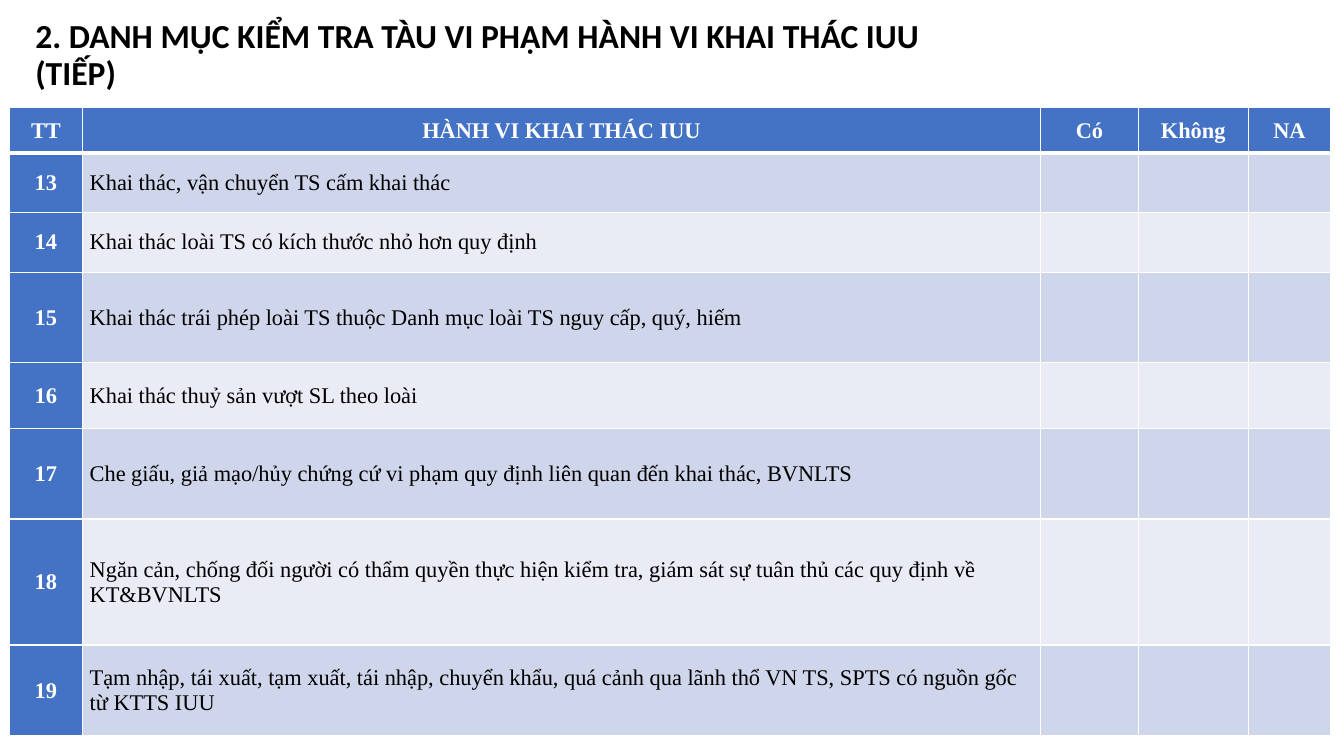
from pptx import Presentation
from pptx import util as u
from pptx.dml.color import RGBColor
from pptx.enum import text
from pptx.oxml import parse_xml
from pptx.oxml.ns import nsdecls

HUES = {"head": "4472C4", "odd": "CFD5EA", "even": "E9EBF5", "ink": "000000", "white": "FFFFFF"}
HEADS = ["TT", "HÀNH VI KHAI THÁC IUU", "Có", "Không", "NA"]
ACTS = [
    "Khai thác, vận chuyển TS cấm khai thác",
    "Khai thác loài TS có kích thước nhỏ hơn quy định",
    "Khai thác trái phép loài TS thuộc Danh mục loài TS nguy cấp, quý, hiếm",
    "Khai thác thuỷ sản vượt SL theo loài",
    "Che giấu, giả mạo/hủy chứng cứ vi phạm quy định liên quan đến khai thác, BVNLTS",
    "Ngăn cản, chống đối người có thẩm quyền thực hiện kiểm tra, giám sát sự tuân thủ các quy định về KT&BVNLTS",
    "Tạm nhập, tái xuất, tạm xuất, tái nhập, chuyển khẩu, quá cảnh qua lãnh thổ VN TS, SPTS có nguồn gốc từ KTTS IUU",
]
WIDTHS = [0.73, 9.5, 0.97, 1.09, 0.82]
HEIGHTS = [0.45, 0.59, 0.59, 0.9, 0.65, 0.9, 1.25, 0.9]
FIRST = 13


def style(para, face, size, hue, bold):
    for run in para.runs:
        run.font.name = face
        run.font.size = u.Pt(size)
        run.font.bold = bold
        run.font.color.rgb = RGBColor.from_string(HUES[hue])


def edge(cell, side, width):
    cell._tc.get_or_add_tcPr().append(parse_xml(
        f'<a:ln{side} {nsdecls("a")} w="{u.Pt(width)}"><a:solidFill>'
        f'<a:srgbClr val="{HUES["white"]}"/></a:solidFill></a:ln{side}>'))


deck = Presentation()
deck.slide_width = u.Inches(13.33)
deck.slide_height = u.Inches(7.5)
slide = deck.slides.add_slide(deck.slide_layouts[5])

title = slide.shapes.title
title.left, title.top = u.Inches(0.25), u.Inches(0.29)
title.width, title.height = u.Inches(9.52), u.Inches(0.53)
frame = title.text_frame
frame.text = "2. DANH MỤC KIỂM TRA TÀU VI PHẠM HÀNH VI KHAI THÁC IUU (TIẾP)"
frame.word_wrap = True
frame.auto_size = text.MSO_AUTO_SIZE.NONE
frame.vertical_anchor = text.MSO_ANCHOR.MIDDLE
para = frame.paragraphs[0]
para.alignment = text.PP_ALIGN.LEFT
para.line_spacing = 0.9
style(para, "Calibri", 24, "ink", True)

rows = [HEADS] + [[str(num), act, "", "", ""] for num, act in enumerate(ACTS, FIRST)]
table = slide.shapes.add_table(
    len(rows), len(HEADS), u.Inches(0.09), u.Inches(1.07),
    u.Inches(sum(WIDTHS)), u.Inches(sum(HEIGHTS))).table
for col, width in zip(table.columns, WIDTHS):
    col.width = u.Inches(width)
for row, height in zip(table.rows, HEIGHTS):
    row.height = u.Inches(height)

for r, row in enumerate(rows):
    for c, words in enumerate(row):
        cell = table.cell(r, c)
        head = r == 0 or c == 0
        cell.margin_left = cell.margin_right = u.Inches(0.05 if head else 0.07)
        cell.margin_top = cell.margin_bottom = 0
        cell.vertical_anchor = text.MSO_ANCHOR.MIDDLE
        for side in "LRTB":
            thick = (r == 0 and side == "B") or (r == 1 and side == "T")
            edge(cell, side, 3 if thick else 1)
        cell.fill.solid()
        hue = "head" if head else "odd" if r % 2 else "even"
        cell.fill.fore_color.rgb = RGBColor.from_string(HUES[hue])
        if words:
            cell.text_frame.text = words
            para = cell.text_frame.paragraphs[0]
            para.alignment = text.PP_ALIGN.CENTER if head else text.PP_ALIGN.LEFT
            para.space_before = u.Pt(6)
            style(para, "Times New Roman", 16, "white" if head else "ink", head)

deck.save("out.pptx")
